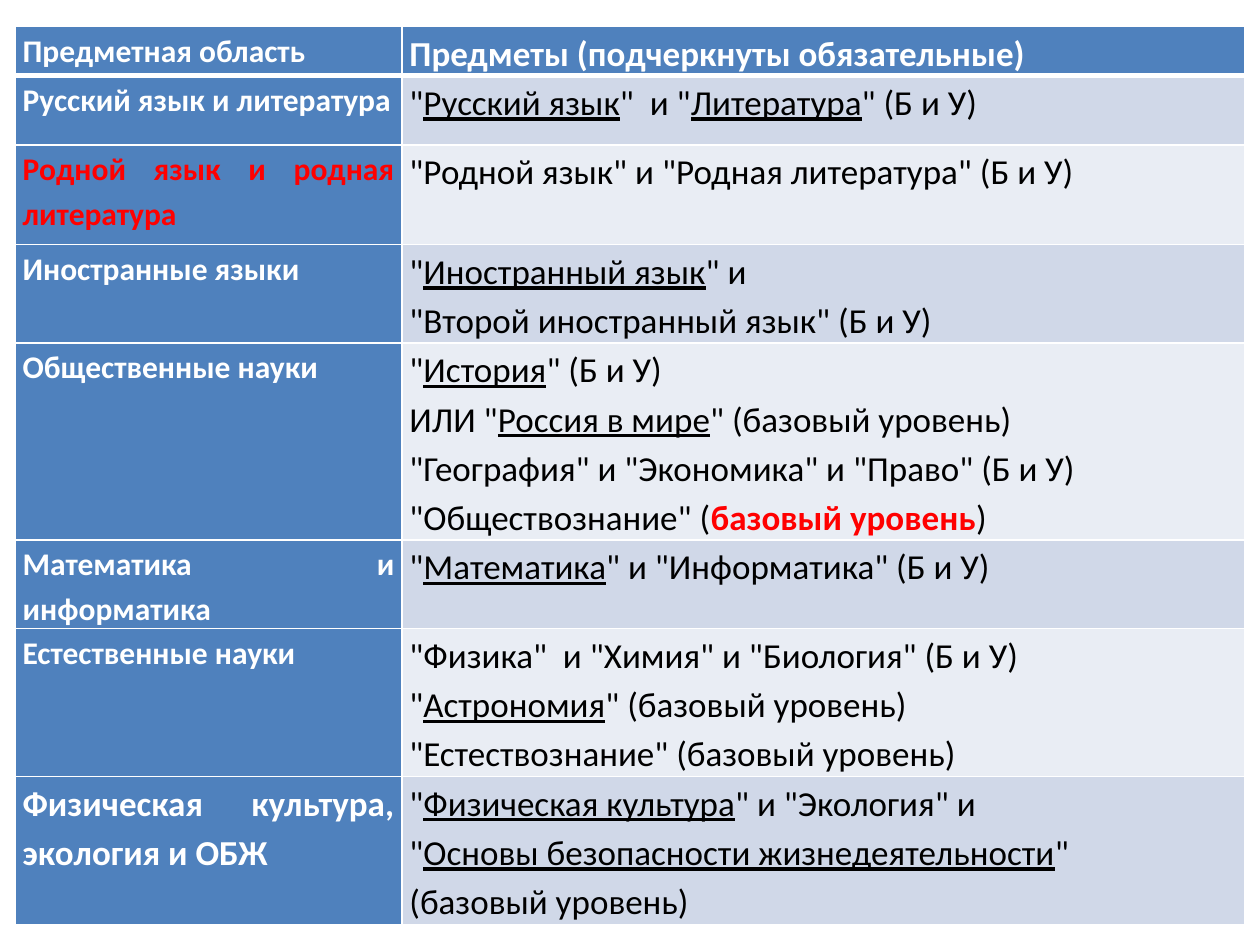
from dataclasses import dataclass

from lxml.etree import SubElement
from pptx import Presentation
from pptx.dml.color import RGBColor
from pptx.enum.text import PP_ALIGN
from pptx.oxml.ns import qn
from pptx.util import Inches, Pt


@dataclass(frozen=True)
class Theme:
    font: str = "Calibri"
    label_size: int = 18
    body_size: int = 20
    line_spacing: float = 1.15
    thin: int = 1
    thick: int = 3
    white: str = "FFFFFF"
    black: str = "000000"
    red: str = "FF0000"
    blue: str = "4F81BD"
    bands: tuple = ("D0D8E8", "E9EDF4")


THEME = Theme()
COLUMN_WIDTHS = (3.07, 6.69)
ROW_HEIGHTS = (0.39, 0.55, 0.79, 0.53, 1.39, 0.53, 1.04, 1.06)

HEADER = ("Предметная область", "Предметы (подчеркнуты обязательные)")
# _..._ marks a compulsory (underlined) subject, *...* a red bold remark.
AREAS = (
    ("Русский язык и литература",
     ['"_Русский язык_"  и "_Литература_" (Б и У)']),
    ("Родной язык и родная литература",
     ['"Родной язык" и "Родная литература" (Б и У)']),
    ("Иностранные языки",
     ['"_Иностранный язык_" и ',
      '"Второй иностранный язык" (Б и У)']),
    ("Общественные науки",
     ['"_История_" (Б и У) ',
      'ИЛИ "_Россия в мире_" (базовый уровень)',
      '"География" и "Экономика" и "Право" (Б и У)',
      '"Обществознание" (*базовый уровень*)']),
    ("Математика и информатика",
     ['"_Математика_" и "Информатика" (Б и У)']),
    ("Естественные науки",
     ['"Физика"  и "Химия" и "Биология" (Б и У)',
      '"_Астрономия_" (базовый уровень)',
      '"Естествознание" (базовый уровень)']),
    ("Физическая культура, экология и ОБЖ",
     ['"_Физическая культура_" и "Экология" и ',
      '"_Основы безопасности жизнедеятельности_" ',
      '(базовый уровень)']),
)
RED_AREA = "Родной язык и родная литература"
LARGE_AREA = "Физическая культура, экология и ОБЖ"


def set_borders(cell, top, bottom):
    """Draw white borders; must run before the fill, which follows them in the XML."""
    properties = cell._tc.get_or_add_tcPr()
    widths = {"a:lnL": THEME.thin, "a:lnR": THEME.thin, "a:lnT": top, "a:lnB": bottom}
    for tag, width in widths.items():
        line = SubElement(properties, qn(tag), w=str(Pt(width)))
        fill = SubElement(line, qn("a:solidFill"))
        SubElement(fill, qn("a:srgbClr"), val=THEME.white)


def add_marked_runs(paragraph, text):
    for i, part in enumerate(text.split("_")):
        for j, piece in enumerate(part.split("*")):
            if not piece:
                continue
            run = paragraph.add_run()
            run.text = piece
            if i % 2:
                run.font.underline = True
            if j % 2:
                run.font.bold = True
                run.font.color.rgb = RGBColor.from_string(THEME.red)


def fill_cell(cell, lines, size, color, bold, background):
    cell.margin_left = cell.margin_right = Inches(0.06)
    cell.margin_top = cell.margin_bottom = 0
    cell.fill.solid()
    cell.fill.fore_color.rgb = RGBColor.from_string(background)
    frame = cell.text_frame
    for index, line in enumerate(lines):
        paragraph = frame.add_paragraph() if index else frame.paragraphs[0]
        paragraph.alignment = PP_ALIGN.JUSTIFY
        paragraph.line_spacing = THEME.line_spacing
        paragraph.font.name = THEME.font
        paragraph.font.size = Pt(size)
        paragraph.font.bold = bold
        paragraph.font.color.rgb = RGBColor.from_string(color)
        add_marked_runs(paragraph, line)


def add_subject_table(slide, left, top, width, height):
    table = slide.shapes.add_table(
        len(AREAS) + 1, len(HEADER), left, top, width, height).table
    for column, column_width in zip(table.columns, COLUMN_WIDTHS):
        column.width = Inches(column_width)
    for index, (row, row_height) in enumerate(zip(table.rows, ROW_HEIGHTS)):
        row.height = Inches(row_height)
        for cell in row.cells:
            set_borders(cell,
                        top=THEME.thick if index == 1 else THEME.thin,
                        bottom=THEME.thick if index == 0 else THEME.thin)

    for column, size in enumerate((THEME.label_size, THEME.body_size)):
        fill_cell(table.cell(0, column), [HEADER[column]], size,
                  THEME.white, True, THEME.blue)
    for index, (area, subjects) in enumerate(AREAS):
        size = THEME.body_size if area == LARGE_AREA else THEME.label_size
        color = THEME.red if area == RED_AREA else THEME.white
        fill_cell(table.cell(index + 1, 0), [area], size, color, True, THEME.blue)
        fill_cell(table.cell(index + 1, 1), subjects, THEME.body_size,
                  THEME.black, False, THEME.bands[index % 2])


def main():
    presentation = Presentation()
    presentation.slide_width, presentation.slide_height = Inches(10), Inches(7.5)
    slide = presentation.slides.add_slide(presentation.slide_layouts[6])
    add_subject_table(slide, Inches(0.12), Inches(0.21), Inches(9.76), Inches(7.02))
    presentation.save("out.pptx")


if __name__ == "__main__":
    main()
